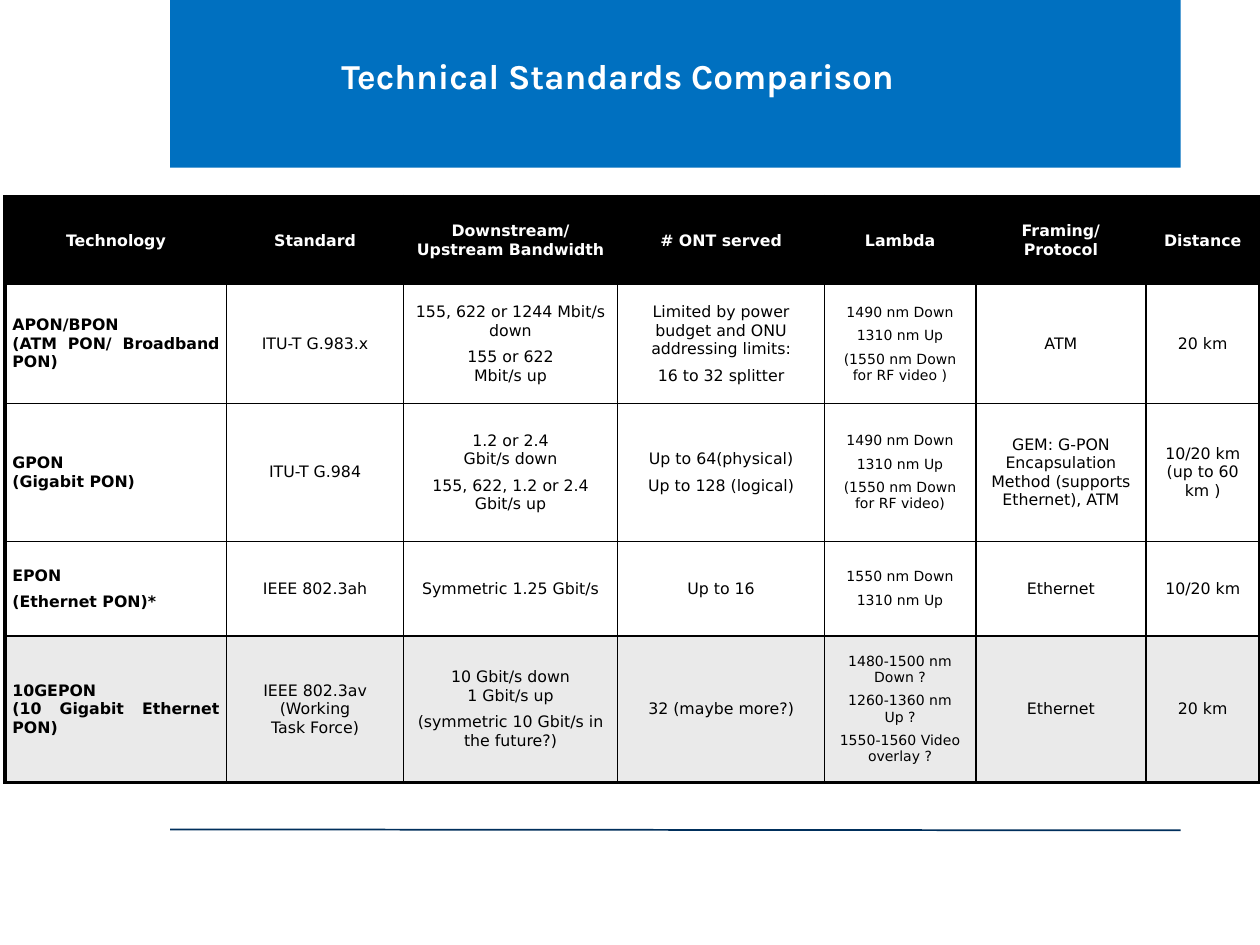
from lxml import etree
from pptx import Presentation
from pptx import util as u
from pptx.dml.color import RGBColor
from pptx.enum import shapes, text
from pptx.oxml.ns import qn

# Content: each cell is a list of paragraphs
TITLE = "Technical Standards Comparison"
HEADER = [["Technology"], ["Standard"], ["Downstream/\nUpstream Bandwidth"],
          ["# ONT served"], ["Lambda"], ["Framing/\nProtocol"], ["Distance"]]
BODY = [
    [["APON/BPON\n(ATM PON/ Broadband PON)"],
     ["ITU-T G.983.x"],
     ["155, 622 or 1244 Mbit/s down", "155 or 622\nMbit/s up"],
     ["Limited by power budget and ONU addressing limits:", "16 to 32 splitter"],
     ["1490 nm Down", "1310 nm Up", "(1550 nm Down for RF video )"],
     ["ATM"],
     ["20 km"]],
    [["GPON\n(Gigabit PON)"],
     ["ITU-T G.984"],
     ["1.2 or 2.4\nGbit/s down", "155, 622, 1.2 or 2.4 Gbit/s up"],
     ["Up to 64(physical)", "Up to 128 (logical)"],
     ["1490 nm Down", "1310 nm Up", "(1550 nm Down for RF video)"],
     ["GEM: G-PON Encapsulation Method (supports Ethernet), ATM"],
     ["10/20 km (up to 60 km )"]],
    [["EPON", "(Ethernet PON)*"],
     ["IEEE 802.3ah"],
     ["Symmetric 1.25 Gbit/s"],
     ["Up to 16"],
     ["1550 nm Down", "1310 nm Up"],
     ["Ethernet"],
     ["10/20 km"]],
    [["10GEPON\n(10 Gigabit Ethernet PON)"],
     ["IEEE 802.3av (Working\nTask Force)"],
     ["10 Gbit/s down\n1 Gbit/s up", "(symmetric 10 Gbit/s in the future?)"],
     ["32 (maybe more?)"],
     ["1480-1500 nm Down ?", "1260-1360 nm Up ?", "1550-1560 Video overlay ?"],
     ["Ethernet"],
     ["20 km"]],
]
ROWS = [HEADER] + BODY
COL_WIDTHS = [4.47, 3.56, 4.32, 4.17, 3.05, 3.43, 2.29]
ROW_HEIGHTS = [1.78, 2.39, 2.79, 1.9, 2.95]
LAMBDA_COL = 4
LAST_ROW, LAST_COL = len(ROWS) - 1, len(HEADER) - 1

BLUE = RGBColor(0x00, 0x70, 0xC0)
NAVY = RGBColor(0x00, 0x2F, 0x5C)
BLACK = RGBColor(0x00, 0x00, 0x00)
WHITE = RGBColor(0xFF, 0xFF, 0xFF)
GREY = RGBColor(0xEA, 0xEA, 0xEA)
TITLE_FONT, TABLE_FONT = "Karla", "DejaVu Sans"
THIN, THICK = 1, 2.25


def set_font(p, name, size, color, bold):
    p.font.name, p.font.size, p.font.bold = name, u.Pt(size), bold
    p.font.color.rgb = color


def set_borders(cell, row, col):
    """Thick lines around the table, thin lines inside."""
    outer = {"lnL": col == 0, "lnR": col == LAST_COL,
             "lnT": row == 0, "lnB": row == LAST_ROW}
    tcPr = cell._tc.get_or_add_tcPr()
    for tag, is_outer in outer.items():
        width = u.Pt(THICK if is_outer else THIN)
        ln = etree.SubElement(tcPr, qn("a:" + tag), w=str(int(width)))
        fill = etree.SubElement(ln, qn("a:solidFill"))
        etree.SubElement(fill, qn("a:srgbClr"), val=str(BLACK))


def fill_cell(cell, paragraphs, row, col):
    set_borders(cell, row, col)
    if row in (0, LAST_ROW):
        cell.fill.solid()
        cell.fill.fore_color.rgb = GREY if row else BLACK
    else:
        cell.fill.background()
    cell.vertical_anchor = text.MSO_ANCHOR.MIDDLE
    cell.margin_left = cell.margin_right = u.Cm(0.15)
    cell.margin_top = cell.margin_bottom = u.Cm(0.13)

    size = 8 if row and col == LAMBDA_COL else 9
    justified = row and col == 0
    tf = cell.text_frame
    for i, words in enumerate(paragraphs):
        p = tf.add_paragraph() if i else tf.paragraphs[0]
        p.text = words
        p.alignment = text.PP_ALIGN.JUSTIFY if justified else text.PP_ALIGN.CENTER
        if i:
            p.space_before = u.Pt(0.4 * size)
        p.space_after = u.Pt(0.1 * size)
        set_font(p, TABLE_FONT, size, BLACK if row else WHITE, row == 0 or col == 0)


prs = Presentation()
prs.slide_width, prs.slide_height = u.Cm(25.4), u.Cm(19.05)
s = prs.slides.add_slide(prs.slide_layouts[5])

# Blue band, placed behind the title
band = s.shapes.add_shape(shapes.MSO_SHAPE.RECTANGLE,
                          u.Cm(3.43), 0, u.Cm(20.37), u.Cm(3.38))
band.shadow.inherit = False
band.fill.solid()
band.fill.fore_color.rgb = BLUE
band.line.fill.background()
s.shapes._spTree.insert(2, band._element)

# Title
title = s.shapes.title
title.left, title.top, title.width, title.height = (
    u.Cm(0.76), 0, u.Cm(23.39), u.Cm(3.18))
tf = title.text_frame
tf.vertical_anchor = text.MSO_ANCHOR.MIDDLE
p = tf.paragraphs[0]
p.text = TITLE
p.alignment = text.PP_ALIGN.CENTER
p.line_spacing = 0.85
set_font(p, TITLE_FONT, 20, WHITE, True)

# Footer line
rule = s.shapes.add_connector(shapes.MSO_CONNECTOR.STRAIGHT,
                              u.Cm(3.43), u.Cm(16.72), u.Cm(23.8), u.Cm(16.74))
rule.line.color.rgb = NAVY
rule.line.width = u.Pt(1)
etree.SubElement(rule._element.spPr, qn("a:effectLst"))

# Comparison table
table = s.shapes.add_table(len(ROWS), len(HEADER), u.Cm(0.1), u.Cm(3.96),
                           u.Cm(sum(COL_WIDTHS)), u.Cm(sum(ROW_HEIGHTS))).table
table.first_row = table.horz_banding = False
for column, width in zip(table.columns, COL_WIDTHS):
    column.width = u.Cm(width)
for r, (cells, height) in enumerate(zip(ROWS, ROW_HEIGHTS)):
    table.rows[r].height = u.Cm(height)
    for c, paragraphs in enumerate(cells):
        fill_cell(table.cell(r, c), paragraphs, r, c)

prs.save("out.pptx")
